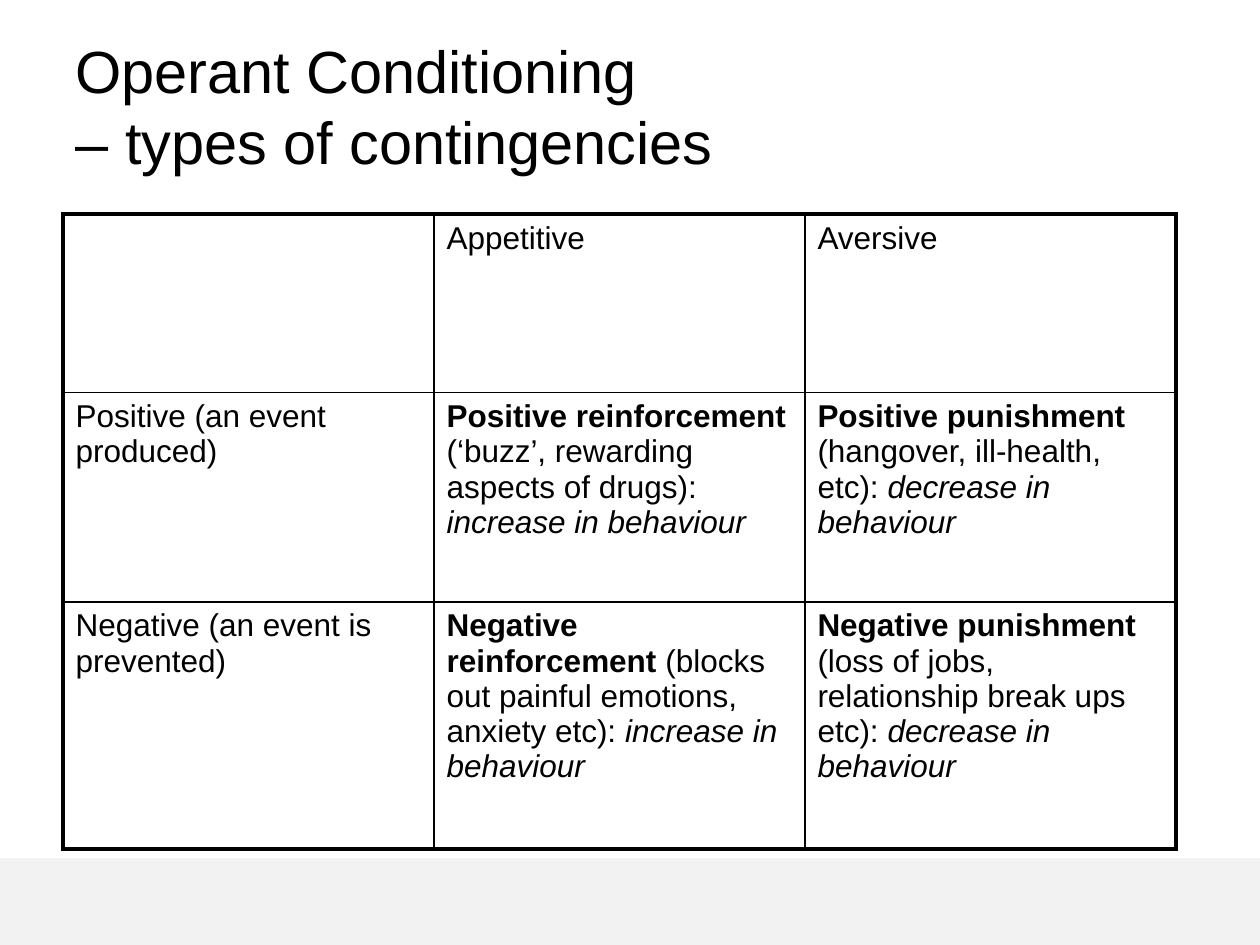
from dataclasses import dataclass

from lxml.etree import SubElement
from pptx import Presentation
from pptx.dml.color import RGBColor
from pptx.enum.shapes import MSO_SHAPE
from pptx.enum.text import MSO_ANCHOR, PP_ALIGN
from pptx.oxml.ns import qn
from pptx.util import Pt


@dataclass(frozen=True)
class Theme:
    font: str = "Arial"
    ink: str = "000000"
    band: str = "F2F2F2"
    title_size: int = 34
    body_size: int = 18
    outer_line: float = 2.25
    inner_line: float = 1


THEME = Theme()
WIDTH, HEIGHT = 720, 540

TITLE = ["Operant Conditioning ", "– types of contingencies"]

# Each cell is a list of (text, style) runs.
CONTINGENCIES = [
    [[], [("Appetitive", "")], [("Aversive", "")]],
    [
        [("Positive (an event produced)", "")],
        [("Positive reinforcement", "bold"),
         (" (‘buzz’, rewarding aspects of drugs): ", ""),
         ("increase in behaviour", "italic")],
        [("Positive punishment", "bold"),
         (" (hangover, ill-health, etc): ", ""),
         ("decrease in behaviour", "italic")],
    ],
    [
        [("Negative (an event is prevented)", "")],
        [("Negative reinforcement", "bold"),
         (" (blocks out painful emotions, anxiety etc): ", ""),
         ("increase in behaviour", "italic")],
        [("Negative punishment", "bold"),
         (" (loss of jobs, relationship break ups etc): ", ""),
         ("decrease in behaviour", "italic")],
    ],
]
ROW_HEIGHTS = [102, 119.6, 141.2]


def add_run(p, text, size, style=""):
    r = p.add_run()
    r.text = text
    r.font.name = THEME.font
    r.font.size = Pt(size)
    r.font.bold = style == "bold"
    r.font.italic = style == "italic"
    r.font.color.rgb = RGBColor.from_string(THEME.ink)


def add_footer_band(s, left, top, width, height):
    sp = s.shapes.add_shape(MSO_SHAPE.RECTANGLE, Pt(left), Pt(top), Pt(width), Pt(height))
    sp.shadow.inherit = False
    sp.fill.solid()
    sp.fill.fore_color.rgb = RGBColor.from_string(THEME.band)
    sp.line.fill.background()


def set_title(s, left, top, width, height):
    sp = s.shapes.title
    sp.left, sp.top, sp.width, sp.height = Pt(left), Pt(top), Pt(width), Pt(height)
    tf = sp.text_frame
    tf.word_wrap = True
    tf.vertical_anchor = MSO_ANCHOR.MIDDLE
    p = tf.paragraphs[0]
    p.alignment = PP_ALIGN.LEFT
    for i, line in enumerate(TITLE):
        if i:
            p.add_line_break()
        add_run(p, line, THEME.title_size)


def set_borders(cell, widths):
    """Draw the sides named in widths (L, R, T, B order, as the schema asks)."""
    tc_pr = cell._tc.get_or_add_tcPr()
    for side, width in widths.items():
        ln = SubElement(tc_pr, qn(f"a:ln{side}"), w=str(Pt(width)))
        SubElement(SubElement(ln, qn("a:solidFill")), qn("a:srgbClr"), val=THEME.ink)


def add_contingency_table(s, left, top, width, row_heights):
    n_rows, n_cols = len(CONTINGENCIES), len(CONTINGENCIES[0])
    table = s.shapes.add_table(n_rows, n_cols, Pt(left), Pt(top),
                               Pt(width), Pt(sum(row_heights))).table
    table.first_row = table.horz_banding = False
    for col in table.columns:
        col.width = Pt(width / n_cols)
    for i, row in enumerate(CONTINGENCIES):
        table.rows[i].height = Pt(row_heights[i])
        for j, runs in enumerate(row):
            cell = table.cell(i, j)
            edges = {"L": j == 0, "R": j == n_cols - 1, "T": i == 0, "B": i == n_rows - 1}
            set_borders(cell, {side: THEME.outer_line if outer else THEME.inner_line
                               for side, outer in edges.items()})
            cell.fill.background()
            cell.margin_left = cell.margin_right = Pt(7.2)
            cell.margin_top = cell.margin_bottom = Pt(3.6)
            p = cell.text_frame.paragraphs[0]
            for text, style in runs:
                add_run(p, text, THEME.body_size, style)


def main():
    prs = Presentation()
    prs.slide_width, prs.slide_height = Pt(WIDTH), Pt(HEIGHT)
    s = prs.slides.add_slide(prs.slide_layouts[5])
    band_top = 490.3
    add_footer_band(s, 0, band_top, WIDTH, HEIGHT - band_top)
    set_title(s, 36, 15, 648, 90)
    add_contingency_table(s, 36, 122.4, 636, ROW_HEIGHTS)
    prs.save("out.pptx")


if __name__ == "__main__":
    main()
